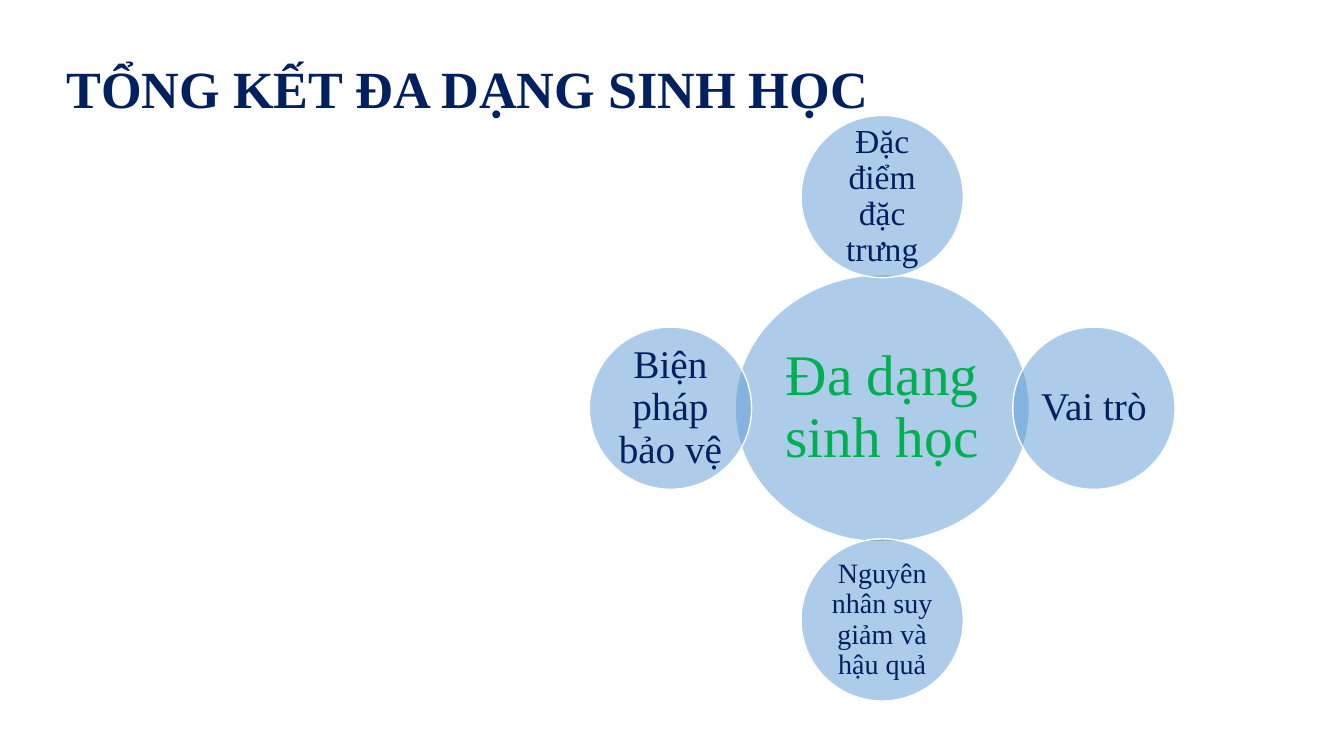
from dataclasses import dataclass
from math import cos, radians, sin

from lxml.etree import SubElement
from pptx import Presentation
from pptx.dml.color import RGBColor as RGB
from pptx.enum.shapes import MSO_SHAPE as Shape
from pptx.enum.text import MSO_ANCHOR as Anchor, MSO_AUTO_SIZE as Fit, PP_ALIGN as Align
from pptx.oxml.ns import qn
from pptx.util import Inches, Pt


@dataclass(frozen=True)
class Theme:
    font: str = "Times New Roman"
    navy: RGB = RGB(0x00, 0x20, 0x60)
    green: RGB = RGB(0x00, 0xB0, 0x50)
    blue: RGB = RGB(0x5B, 0x9B, 0xD5)
    white: RGB = RGB(0xFF, 0xFF, 0xFF)
    title: float = 37.3
    hub: int = 41
    large: int = 28
    medium: int = 24
    small: int = 20


theme = Theme()


def write(shape, text, size, color, align, inset, bold=False):
    frame = shape.text_frame
    frame.text = text
    frame.word_wrap = True
    frame.auto_size = Fit.NONE
    frame.vertical_anchor = Anchor.MIDDLE
    frame.margin_left = frame.margin_right = Inches(inset)
    frame.margin_top = frame.margin_bottom = Inches(min(inset, 0.06))
    para = frame.paragraphs[0]
    para.alignment = align
    para.line_spacing = 0.9
    font = para.runs[0].font
    font.name, font.size, font.bold = theme.font, Pt(size), bold
    font.color.rgb = color


def bubble(x, y, width, height, text, size, color, inset):
    """Add a half-transparent ellipse centred on x, y."""
    oval = slide.shapes.add_shape(
        Shape.OVAL, Inches(x - width / 2), Inches(y - height / 2),
        Inches(width), Inches(height))
    oval.shadow.inherit = False
    oval.fill.solid()
    oval.fill.fore_color.rgb = theme.blue
    tint = oval._element.spPr.find(qn("a:solidFill"))[0]
    SubElement(tint, qn("a:alpha")).set("val", "50000")
    oval.line.color.rgb = theme.white
    oval.line.width = Pt(1)
    write(oval, text, size, color, Align.CENTER, inset)


deck = Presentation()
deck.slide_width, deck.slide_height = Inches(13.33), Inches(7.5)
slide = deck.slides.add_slide(deck.slide_layouts[5])

title = slide.shapes.title
title.left, title.top = Inches(0.56), Inches(0.28)
title.width, title.height = Inches(12), Inches(1.25)
write(title, "TỔNG KẾT ĐA DẠNG SINH HỌC", theme.title, theme.navy,
      Align.JUSTIFY, 0.1, bold=True)

mid_x, mid_y, reach, size = 8.75, 4.05, 2.1, 1.61
bubble(mid_x, mid_y, 2.92, 2.65, "Đa dạng sinh học", theme.hub, theme.green, 0.06)

topics = [
    ("Đặc điểm đặc trưng", theme.medium),
    ("Vai trò", theme.large),
    ("Nguyên nhân suy giảm và hậu quả", theme.small),
    ("Biện pháp bảo vệ", theme.large),
]
for i, (topic, points) in enumerate(topics):
    angle = radians(360 / len(topics) * i - 90)
    bubble(mid_x + reach * cos(angle), mid_y + reach * sin(angle),
           size, size, topic, points, theme.navy, 0.03)

deck.save("out.pptx")
